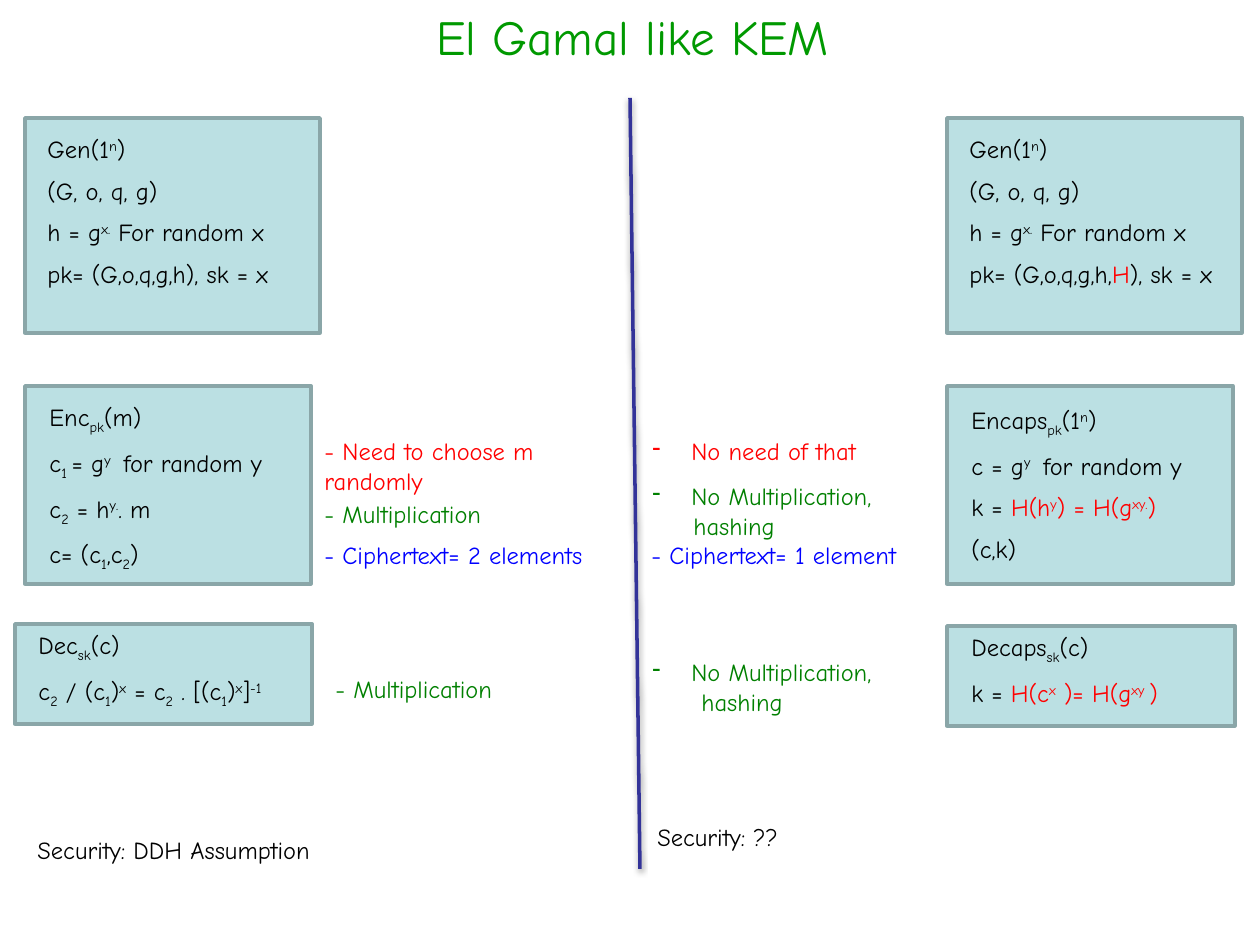
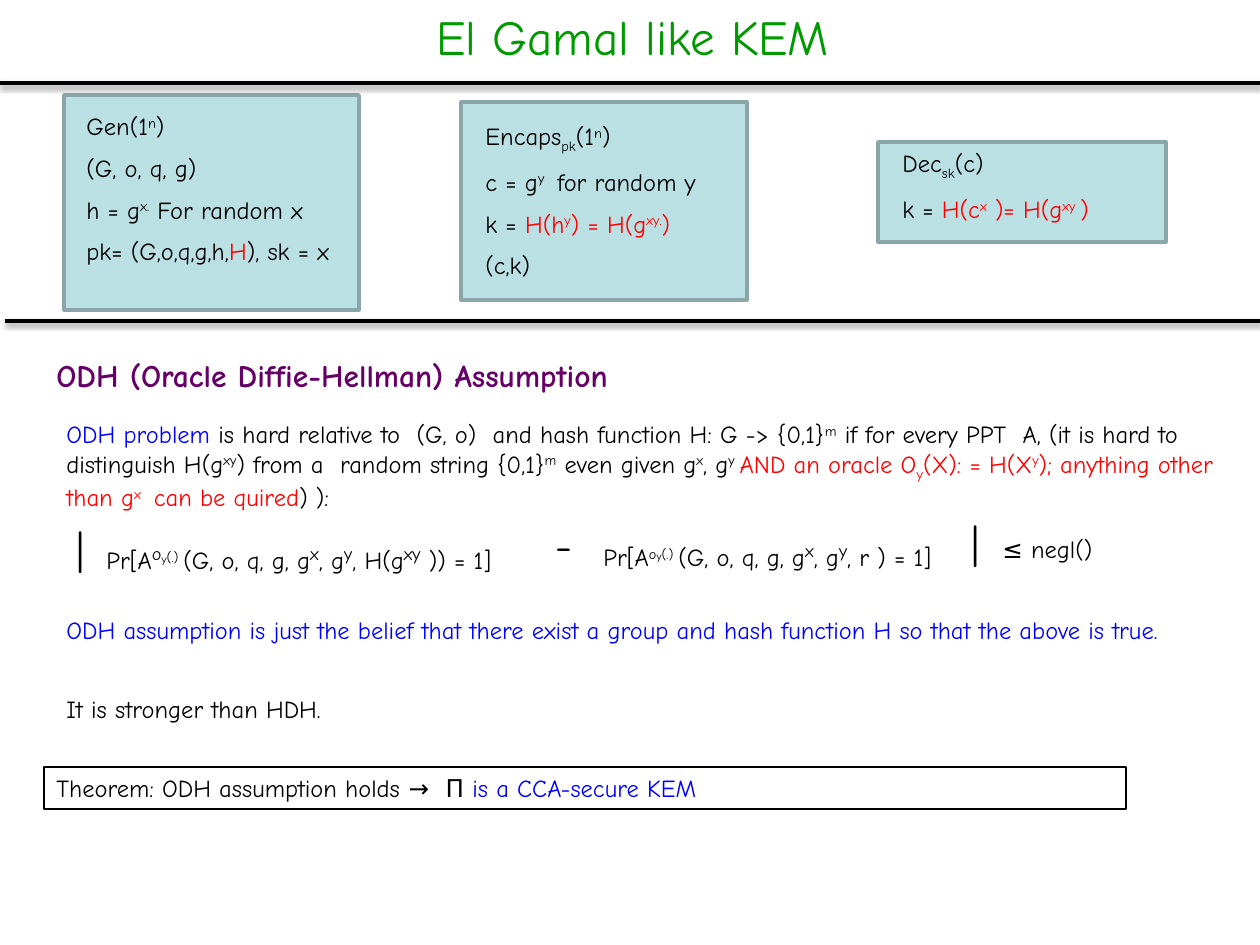
from pptx import Presentation
from pptx.dml.color import RGBColor as RGB
from pptx.enum.shapes import MSO_CONNECTOR as LINE, MSO_SHAPE as SHAPE
from pptx.enum.text import MSO_ANCHOR as ANCHOR, PP_ALIGN as ALIGN
from pptx.oxml import parse_xml
from pptx.oxml.ns import nsdecls, qn
from pptx.util import Pt

# Shared look
PX = 914400 / 126
FONT = "Comic Neue"
SIZE = 14
BLACK = RGB(0, 0, 0)
RED = RGB(255, 0, 0)
BLUE = RGB(0, 0, 255)
GREEN = RGB(0, 128, 0)
LEAF = RGB(0, 153, 0)
PLUM = RGB(102, 0, 102)
NAVY = RGB(51, 51, 153)
PALE = RGB(187, 224, 227)
EDGE = RGB(138, 166, 168)
INK = {"#k": BLACK, "#r": RED, "#b": BLUE}
TITLE = "El Gamal like KEM"

# Markup: ~ parts runs, ^ raises, _ lowers, #r #b #k set ink, #18 sets size
GEN = ["Gen(1~^n~)", "(G, o, q, g)", "h = g~^x.~ For random x"]
GEN_PKE = GEN + ["pk= (G,o,q,g,h), sk = x"]
GEN_KEM = GEN + ["pk= (G,o,q,g,h,~#r~H~#k~), sk = x"]
ENC = ["Enc~_pk~(m)", "c~_1 ~= g~^y ~ for random y",
       "c~_2~ = h~^y.~. m", "c= (c~_1~,c~_2~)"]
ENCAPS = ["Encaps~_pk~(1~^n~)", "c = g~^y ~ for random y",
          "k = ~#r~H(h~^y~) = H(g~^xy.~)", "(c,k)"]
DEC = ["Dec~_sk~(c)", "c~_2~ / (c~_1~)~^x~ = c~_2~ . [(c~_1~)~^x~]~^-1"]
KEY = "k = ~#r~H(c~^x~ )= H(g~^xy ~)"
DECAPS = ["Decaps~_sk~(c)", KEY]
DEC_KEM = ["Dec~_sk~(c)", KEY]

# Card kinds: width, height, text shift right, text shift down, text width
GEN_BOX = (295, 215, 10, 10, 377)
ENC_BOX = (286, 198, 12, 10, 286)
CAP_BOX = (286, 198, 12, 13, 286)
DEC_BOX = (297, 100, 11, 0, 286)
KEY_BOX = (288, 100, 12, 0, 276)

# Cards: left, top, kind, lines
PAIR = [
    (25, 386, ENC_BOX, ENC), (15, 624, DEC_BOX, DEC),
    (25, 118, GEN_BOX, GEN_PKE), (947, 386, CAP_BOX, ENCAPS),
    (947, 626, KEY_BOX, DECAPS), (947, 118, GEN_BOX, GEN_KEM),
]
ROW = [
    (461, 102, CAP_BOX, ENCAPS), (878, 142, KEY_BOX, DEC_KEM),
    (64, 95, GEN_BOX, GEN_KEM),
]

# Notes: left, top, width, ink, text
NOTES = [
    (639, 534, 299, BLUE, "- Ciphertext= 1 element"),
    (312, 534, 315, BLUE, "- Ciphertext= 2 elements"),
    (312, 493, 200, GREEN, "- Multiplication"),
    (323, 668, 200, GREEN, "- Multiplication"),
    (25, 829, 334, BLACK, "Security: DDH Assumption"),
    (312, 430, 287, RED, "- Need to choose m randomly"),
    (645, 816, 615, BLACK, "Security: ??"),
]
# Dashed notes: top, ink, lines, indent of the second line
DASHED = [
    (475, GREEN, ["No Multiplication,", "hashing"], 41),
    (651, GREEN, ["No Multiplication,", "hashing"], 49),
    (430, RED, ["No need of that"], 0),
]

# Body of the second slide: left, top, width, ink, size, text
ODH = (
    "#b~ODH problem ~#k~is hard relative to  (G, o)  and hash function H: "
    "G -> {0,1}~^m~ if for every PPT  A, (it is hard to distinguish H(g~^xy~"
    ") from a  random string {0,1}~^m~ even given g~^x~, g~^y ~#r~"
    "AND an oracle O~_y~(X): = H(X~^y~); anything other than g~^x ~"
    " can be quired~#k~) ):"
)
ARGS = "#11~^y~#14~^(.) ~(G, o, q, g, g~#18~^x~#14~, g~#18~^y~#14~"
LEFT = "Pr[A~#18~^o~" + ARGS + ", H(g~#18~^xy~#14~ )) = 1]"
RIGHT = "Pr[A~^o~" + ARGS + ", r ) = 1]"
BODY = [
    (54, 688, 1160, BLACK, SIZE, "It is stronger than HDH."),
    (54, 413, 1206, BLACK, SIZE, ODH),
    (94, 532, 476, BLACK, SIZE, LEFT),
    (591, 529, 387, BLACK, SIZE, RIGHT),
    (64, 518, 48, BLACK, 24, "|"),
    (959, 512, 48, BLACK, 24, "|"),
    (543, 512, 57, BLACK, 24, "-"),
    (990, 528, 155, BLACK, SIZE, "≤ negl()"),
    (54, 609, 1206, BLUE, SIZE,
     "ODH assumption is just the belief that there exist a group and "
     "hash function H so that the above is true."),
]
HEAD = "ODH (Oracle Diffie-Hellman) Assumption"
CLAIM = "Theorem: ODH assumption holds →  Π~#b~ is a CCA-secure KEM"


def emu(*vals):
    return [round(v * PX) for v in vals]


# Text
def style(run, ink, size, bold=False):
    font = run.font
    font.name, font.size, font.bold = FONT, Pt(size), bold
    font.color.rgb = ink


def write(para, text, ink, size, bold=False):
    for part in text.split("~"):
        if part in INK:
            ink = INK[part]
        elif part.startswith("#"):
            size = int(part[1:])
        else:
            run = para.add_run()
            run.text = part.lstrip("^_")
            style(run, ink, size, bold)
            shift = {"^": "30000", "_": "-25000"}.get(part[0])
            if shift:
                run._r.get_or_add_rPr().set("baseline", shift)


def fill(frame, lines, ink, size, bold=False, gap=0):
    frame.word_wrap = True
    frame.vertical_anchor = ANCHOR.TOP
    for i, line in enumerate(lines):
        para = frame.add_paragraph() if i else frame.paragraphs[0]
        para.alignment = ALIGN.LEFT
        if i:
            para.space_before = Pt(gap)
        write(para, line, ink, size, bold)


def text(slide, x, y, w, lines, ink=BLACK, size=SIZE, bold=False, gap=0):
    high = 13 + len(lines) * size * 2
    frame = slide.shapes.add_textbox(*emu(x, y, w, high)).text_frame
    fill(frame, lines, ink, size, bold, gap)
    return frame


def indent(para, left, first=0):
    prop = para._p.get_or_add_pPr()
    left, first = emu(left, first)
    prop.set("marL", str(left))
    prop.set("indent", str(first))
    return prop


def dash(slide, y, ink, lines, inset):
    paras = text(slide, 640, y, 267, lines, ink).paragraphs
    prop = indent(paras[0], 39, -39)
    prop.append(parse_xml(f'<a:buChar {nsdecls("a")} char="-"/>'))
    for para in paras[1:]:
        indent(para, inset)


# Shapes
def rect(slide, x, y, w, h, ink, width):
    box = slide.shapes.add_shape(SHAPE.RECTANGLE, *emu(x, y, w, h))
    box.shadow.inherit = False
    box.fill.background()
    box.line.color.rgb = ink
    box.line.width = Pt(width)
    return box


def card(slide, x, y, kind, lines):
    w, h, dx, dy, wide = kind
    box = rect(slide, x, y, w, h, EDGE, 2)
    box.fill.solid()
    box.fill.fore_color.rgb = PALE
    text(slide, x + dx, y + dy, wide, lines, gap=SIZE / 2)


def rule(slide, x1, y1, x2, y2, ink):
    line = slide.shapes.add_connector(LINE.STRAIGHT, *emu(x1, y1, x2, y2))
    line.line.color.rgb = ink
    line.line.width = Pt(2)
    line._element.find(qn("p:spPr")).append(parse_xml(
        f'<a:effectLst {nsdecls("a")}><a:outerShdw blurRad="40000" '
        'dist="20000" dir="5400000" rotWithShape="0">'
        '<a:srgbClr val="000000"><a:alpha val="38000"/></a:srgbClr>'
        '</a:outerShdw></a:effectLst>'))


def start(deck):
    slide = deck.slides.add_slide(deck.slide_layouts[5])
    head = slide.shapes.title
    head.left, head.top, head.width, head.height = emu(-15, -4, 1295, 79)
    head.text_frame.text = TITLE
    head.text_frame.vertical_anchor = ANCHOR.MIDDLE
    para = head.text_frame.paragraphs[0]
    para.alignment = ALIGN.CENTER
    style(para.runs[0], LEAF, 28)
    return slide


# Slide 1: the two schemes side by side
def compare(deck):
    slide = start(deck)
    rule(slide, 630, 98, 640, 869, NAVY)
    for item in PAIR:
        card(slide, *item)
    for x, y, w, ink, line in NOTES:
        text(slide, x, y, w, [line], ink)
    for item in DASHED:
        dash(slide, *item)


# Slide 2: the assumption and the theorem
def assume(deck):
    slide = start(deck)
    for item in ROW:
        card(slide, *item)
    rule(slide, 0, 83, 1260, 83, BLACK)
    rule(slide, 5, 321, 1260, 321, BLACK)
    text(slide, 44, 350, 814, [HEAD], PLUM, 18, True)
    for x, y, w, ink, size, line in BODY:
        text(slide, x, y, w, [line], ink, size)
    box = rect(slide, 44, 767, 1082, 42, BLACK, 0.75)
    fill(box.text_frame, [CLAIM], BLACK, SIZE)


def main():
    deck = Presentation()
    deck.slide_width, deck.slide_height = emu(1260, 945)
    compare(deck)
    assume(deck)
    deck.save("out.pptx")


if __name__ == "__main__":
    main()
